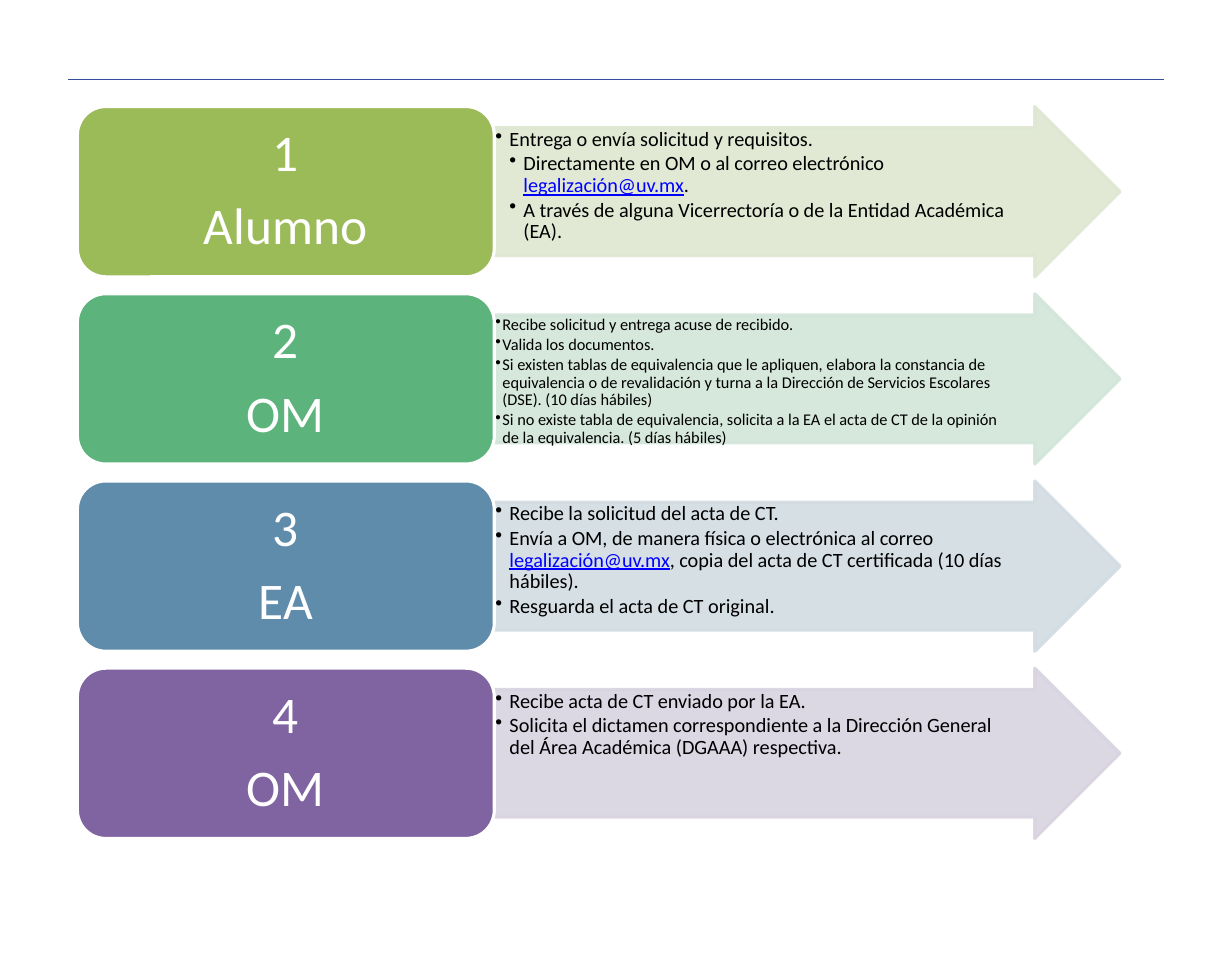
from pptx import Presentation
from pptx.dml.color import RGBColor
from pptx.enum.shapes import MSO_CONNECTOR, MSO_SHAPE
from pptx.enum.text import MSO_ANCHOR, PP_ALIGN
from pptx.oxml.ns import qn
from pptx.util import Pt
from lxml import etree

ARROW, ROUND = MSO_SHAPE.RIGHT_ARROW, MSO_SHAPE.ROUNDED_RECTANGLE
TOP, MIDDLE = MSO_ANCHOR.TOP, MSO_ANCHOR.MIDDLE
LEFT, CENTER = PP_ALIGN.LEFT, PP_ALIGN.CENTER
STRAIGHT = MSO_CONNECTOR.STRAIGHT

WHITE = RGBColor(0xFF, 0xFF, 0xFF)
BLACK = RGBColor(0, 0, 0)
BLUE = RGBColor(0, 0, 0xFF)
NAVY = RGBColor(0x36, 0x4F, 0x9D)
OLIVE, PALE_OLIVE = RGBColor(0x9B, 0xBB, 0x59), RGBColor(0xDE, 0xE7, 0xD1)
GREEN, PALE_GREEN = RGBColor(0x5C, 0xB3, 0x7C), RGBColor(0xD2, 0xE5, 0xD9)
STEEL, PALE_STEEL = RGBColor(0x60, 0x8C, 0xAB), RGBColor(0xD2, 0xDC, 0xE2)
PLUM, PALE_PLUM = RGBColor(0x80, 0x64, 0xA2), RGBColor(0xD8, 0xD3, 0xE0)

FONT = "Calibri"
MAIL = "legalización@uv.mx"

# Each step: who, dark colour, pale colour, text size, indent step, items.
# Each item: level, then its runs.
STEPS = [
    ("Alumno", OLIVE, PALE_OLIVE, 13, 9, [
        (1, "Entrega o envía solicitud y requisitos."),
        (2, "Directamente en OM o al correo electrónico ", MAIL, "."),
        (2, "A través de alguna Vicerrectoría o de la Entidad Académica (EA)."),
    ]),
    ("OM", GREEN, PALE_GREEN, 10.5, 4.5, [
        (1, "Recibe solicitud y entrega acuse de recibido."),
        (1, "Valida los documentos."),
        (1, "Si existen tablas de equivalencia que le apliquen, elabora la "
            "constancia de equivalencia o de revalidación y turna a la "
            "Dirección de Servicios Escolares (DSE). (10 días hábiles)"),
        (1, "Si no existe tabla de equivalencia, solicita a la EA el acta de "
            "CT de la opinión de la equivalencia. (5 días hábiles)"),
    ]),
    ("EA", STEEL, PALE_STEEL, 13, 9, [
        (1, "Recibe la solicitud del acta de CT."),
        (1, "Envía a OM, de manera física o electrónica al correo ", MAIL,
            ", copia del acta de CT certificada (10 días hábiles)."),
        (1, "Resguarda el acta de CT original."),
    ]),
    ("OM", PLUM, PALE_PLUM, 13, 9, [
        (1, "Recibe acta de CT enviado por la EA."),
        (1, "Solicita el dictamen correspondiente a la Dirección General del "
            "Área Académica (DGAAA) respectiva."),
    ]),
]

WIDE, HIGH = 791.28, 612.72
BOX_X, BOX_W = 49.7, 267.8
ARROW_X, ARROW_W = BOX_X + BOX_W, 401.8
ROW_Y, ROW_H, PITCH = 68.4, 109.4, 120.25
RULE_X, RULE_END, RULE_Y = 43.9, 747.4, 51.1


def add_block(slide, kind, x, y, w, fill, edge, anchor, pads):
    """Add a filled shape ready for text; pads are left, top, right, bottom."""
    shape = slide.shapes.add_shape(kind, Pt(x), Pt(y), Pt(w), Pt(ROW_H))
    shape.shadow.inherit = False
    shape.fill.solid()
    shape.fill.fore_color.rgb = fill
    shape.line.color.rgb = edge
    shape.line.width = Pt(2)
    frame = shape.text_frame
    frame.word_wrap = True
    frame.vertical_anchor = anchor
    (frame.margin_left, frame.margin_top,
     frame.margin_right, frame.margin_bottom) = map(Pt, pads)
    return shape


def add_para(frame, first, runs, size, color, align, after):
    para = frame.paragraphs[0] if first else frame.add_paragraph()
    para.alignment = align
    para.line_spacing = 0.9
    para.space_after = Pt(after)
    for text in runs:
        run = para.add_run()
        run.text = text
        run.font.name = FONT
        run.font.size = Pt(size)
        run.font.color.rgb = BLUE if text == MAIL else color
        if text == MAIL:
            run.font.underline = True
    return para


def add_bullet(para, level, step):
    props = para._p.get_or_add_pPr()
    props.set("marL", str(Pt(level * step)))
    props.set("indent", str(-Pt(step)))
    etree.SubElement(props, qn("a:buChar")).set("char", "•")


def fade(shape):
    """Make the fill and the line 90 % opaque."""
    for color in shape._element.spPr.iter(qn("a:srgbClr")):
        etree.SubElement(color, qn("a:alpha")).set("val", "90000")


def add_step(slide, index, who, dark, pale, size, step, items):
    y = ROW_Y + index * PITCH
    # The wide right pad keeps the text clear of the arrow's tip.
    arrow = add_block(slide, ARROW, ARROW_X, y, ARROW_W, pale, pale,
                      TOP, (0.7, 0.7, 28, 0.7))
    arrow.adjustments[0], arrow.adjustments[1] = 0.75, 0.5
    fade(arrow)
    for n, (level, *runs) in enumerate(items):
        para = add_para(arrow.text_frame, n == 0, runs, size, BLACK, LEFT, 1.6)
        add_bullet(para, level, step)

    box = add_block(slide, ROUND, BOX_X, y, BOX_W, dark, WHITE,
                    MIDDLE, (10, 5, 10, 5))
    for n, text in enumerate((str(index + 1), who)):
        add_para(box.text_frame, n == 0, [text], 33, WHITE, CENTER, 11.5)


def main():
    deck = Presentation()
    deck.slide_width, deck.slide_height = Pt(WIDE), Pt(HIGH)
    slide = deck.slides.add_slide(deck.slide_layouts[6])

    rule = slide.shapes.add_connector(
        STRAIGHT, Pt(RULE_X), Pt(RULE_Y), Pt(RULE_END), Pt(RULE_Y))
    rule.line.color.rgb = NAVY
    rule.line.width = Pt(0.75)
    etree.SubElement(rule._element.spPr, qn("a:effectLst"))

    for index, step in enumerate(STEPS):
        add_step(slide, index, *step)
    deck.save("out.pptx")


if __name__ == "__main__":
    main()
